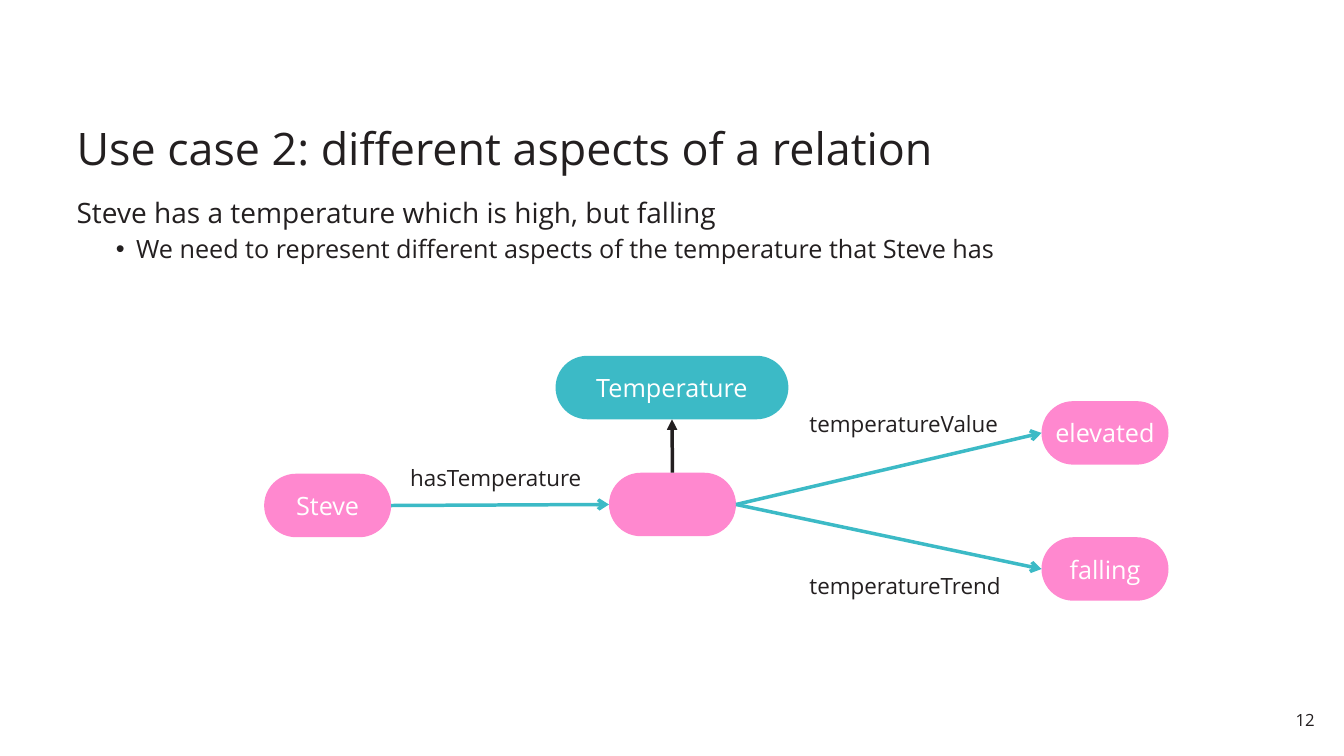
from lxml import etree
from pptx import Presentation
from pptx import util as u
from pptx.dml.color import RGBColor
from pptx.enum import shapes, text
from pptx.oxml.ns import qn

EMU_PER_PX = 9144  # 100 px to the inch
INK, TEAL, PINK, WHITE = "231F20", "3CBAC6", "FF88CF", "FFFFFF"
TOP, LEFT, BOTTOM, RIGHT = range(4)  # connection sites


def px(*lengths):
    return [u.Emu(length * EMU_PER_PX) for length in lengths]


def colour(value):
    return RGBColor.from_string(value)


def write(para, words, size=18, ink=INK, align=text.PP_ALIGN.LEFT,
          before=0, spacing=1.0, bullet=None, margin=0, indent=0):
    para.alignment = align
    para.space_before = u.Pt(before)
    para.line_spacing = spacing
    if bullet:
        props = para._p.get_or_add_pPr()
        props.set("marL", str(px(margin)[0]))
        props.set("indent", str(px(indent)[0]))
        etree.SubElement(props, qn("a:buFont"), typeface="Arial")
        etree.SubElement(props, qn("a:buChar"), char=bullet)
    span = para.add_run()
    span.text = words
    span.font.name = "Open Sans"
    span.font.size = u.Pt(size)
    span.font.color.rgb = colour(ink)


class Slide:
    def __init__(self, deck):
        self.page = deck.slides.add_slide(deck.slide_layouts[6])
        self.shapes = self.page.shapes

    def box(self, left, top, width, height, inset=(10, 5), wrap=True,
            anchor=text.MSO_ANCHOR.TOP):
        frame = self.shapes.add_textbox(*px(left, top, width, height)).text_frame
        frame.margin_left = frame.margin_right = px(inset[0])[0]
        frame.margin_top = frame.margin_bottom = px(inset[1])[0]
        frame.word_wrap = wrap
        frame.vertical_anchor = anchor
        return frame

    def label(self, left, top, width, words):
        write(self.box(left, top, width, 37, wrap=False).paragraphs[0], words, size=16)

    def pill(self, left, top, words="", width=126, fill=PINK):
        shape = self.shapes.add_shape(shapes.MSO_SHAPE.ROUNDED_RECTANGLE,
                                      *px(left, top, width, 63))
        shape.adjustments[0] = 0.5
        shape.shadow.inherit = False
        shape.fill.solid()
        shape.fill.fore_color.rgb = colour(fill)
        shape.line.fill.background()
        if words:
            frame = shape.text_frame
            frame.word_wrap = False
            frame.vertical_anchor = text.MSO_ANCHOR.MIDDLE
            write(frame.paragraphs[0], words, ink=WHITE, align=text.PP_ALIGN.CENTER)
        return shape

    def arrow(self, start, start_site, end, end_site, ink=TEAL, head="arrow"):
        line = self.shapes.add_connector(shapes.MSO_CONNECTOR.STRAIGHT, 0, 0, 0, 0)
        line.begin_connect(start, start_site)
        line.end_connect(end, end_site)
        line.line.width = u.Pt(2.5)
        line.line.color.rgb = colour(ink)
        etree.SubElement(line.line._get_or_add_ln(), qn("a:tailEnd"), type=head)
        etree.SubElement(line._element.spPr, qn("a:effectLst"))


def main():
    deck = Presentation()
    deck.slide_width, deck.slide_height = px(1333, 750)
    slide = Slide(deck)

    # Page number, title and body
    number = slide.box(1265, 698, 47, 31, inset=(8, 6))
    write(number.paragraphs[0], "12", size=12, align=text.PP_ALIGN.RIGHT)
    title = slide.box(68, 76, 1197, 102, inset=(8, 4), anchor=text.MSO_ANCHOR.BOTTOM)
    write(title.paragraphs[0], "Use case 2: different aspects of a relation",
          size=32, spacing=0.9)
    body = slide.box(68, 194, 1197, 118, inset=(8, 4))
    write(body.paragraphs[0], "Steve has a temperature which is high, but falling",
          size=20, spacing=0.9)
    write(body.add_paragraph(),
          "We need to represent different aspects of the temperature that Steve has",
          before=5, spacing=0.9, bullet="•", margin=59, indent=-20)

    # Nodes
    steve = slide.pill(262, 470, "Steve")
    reading = slide.pill(604, 469)
    temperature = slide.pill(551, 353, "Temperature", width=231, fill=TEAL)
    falling = slide.pill(1033, 533, "falling")
    elevated = slide.pill(1033, 398, "elevated")

    # Relations
    slide.arrow(steve, RIGHT, reading, LEFT)
    slide.arrow(reading, TOP, temperature, BOTTOM, ink=INK, head="triangle")
    for aspect in (elevated, falling):
        slide.arrow(reading, RIGHT, aspect, LEFT)

    # Relation names
    slide.label(397, 456, 198, "hasTemperature")
    slide.label(793, 402, 214, "temperatureValue")
    slide.label(793, 563, 218, "temperatureTrend")

    deck.save("out.pptx")


if __name__ == "__main__":
    main()
